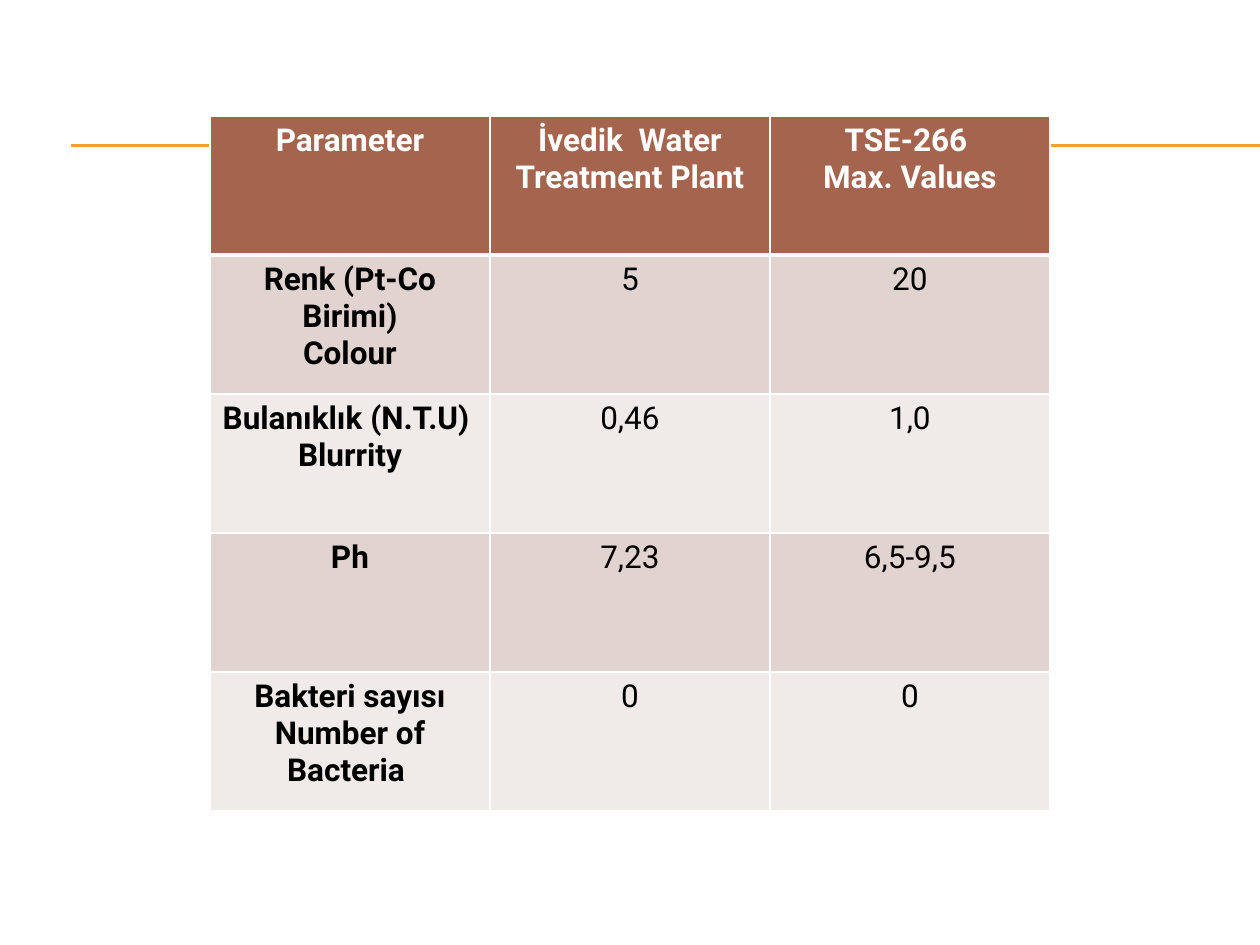
from dataclasses import dataclass

from lxml import etree
from pptx import Presentation
from pptx import util as u
from pptx.dml.color import RGBColor
from pptx.enum import shapes, text
from pptx.oxml.ns import qn

FONT = "Roboto"
WHITE, BLACK, GOLD = "FFFFFF", "000000", "F0A22E"
HEAD, DARK, LIGHT = "A5644E", "E1D3D0", "F0EAE9"


@dataclass
class Rule:
    left: int
    right: int
    top: int


@dataclass
class Grid:
    left: int
    top: int
    wide: int
    high: int
    rows: list[tuple[str, ...]]


RULES = [Rule(71, 1260, 145), Rule(71, 1260, 146)]
GRID = Grid(210, 116, 280, 139, [
    ("Parameter", "İvedik  Water Treatment Plant", "TSE-266 \nMax. Values"),
    ("Renk (Pt-Co Birimi)\nColour", "5", "20"),
    ("Bulanıklık (N.T.U) \nBlurrity", "0,46", "1,0"),
    ("Ph", "7,23", "6,5-9,5"),
    ("Bakteri sayısı\nNumber of Bacteria ", "0", "0"),
])


def px(num: int) -> int:
    return round(num * u.Inches(1) / 126)


def color(code: str) -> RGBColor:
    return RGBColor.from_string(code)


def draw_rule(slide, rule: Rule) -> None:
    line = slide.shapes.add_connector(
        shapes.MSO_CONNECTOR.STRAIGHT,
        px(rule.left), px(rule.top), px(rule.right), px(rule.top))
    line.line.color.rgb = color(GOLD)
    line.line.width = u.Pt(0.75)
    etree.SubElement(line._element.spPr, qn("a:effectLst"))


def set_edges(cell, row: int) -> None:
    props = cell._tc.get_or_add_tcPr()
    wide = {"T": 3 if row == 1 else 1, "B": 3 if row == 0 else 1}
    for spot, side in enumerate("LRTB"):
        edge = etree.Element(qn(f"a:ln{side}"), w=str(u.Pt(wide.get(side, 1))))
        fill = etree.SubElement(edge, qn("a:solidFill"))
        etree.SubElement(fill, qn("a:srgbClr"), val=WHITE)
        props.insert(spot, edge)


def fill_cell(cell, words: str, row: int, col: int) -> None:
    cell.text = words
    cell.fill.solid()
    cell.fill.fore_color.rgb = color(HEAD if row == 0 else DARK if row % 2 else LIGHT)
    for para in cell.text_frame.paragraphs:
        para.alignment = text.PP_ALIGN.CENTER
        para.font.name = FONT
        para.font.size = u.Pt(18)
        para.font.bold = row == 0 or col == 0
        para.font.color.rgb = color(WHITE if row == 0 else BLACK)
    set_edges(cell, row)


def draw_grid(slide, grid: Grid) -> None:
    count, span = len(grid.rows), len(grid.rows[0])
    table = slide.shapes.add_table(
        count, span, px(grid.left), px(grid.top),
        px(grid.wide * span), px(grid.high * count)).table
    for row, line in enumerate(grid.rows):
        for col, words in enumerate(line):
            fill_cell(table.cell(row, col), words, row, col)


def main() -> None:
    deck = Presentation()
    deck.slide_width, deck.slide_height = px(1260), px(945)
    slide = deck.slides.add_slide(deck.slide_layouts[6])
    for rule in RULES:
        draw_rule(slide, rule)
    draw_grid(slide, GRID)
    deck.save("out.pptx")


if __name__ == "__main__":
    main()
